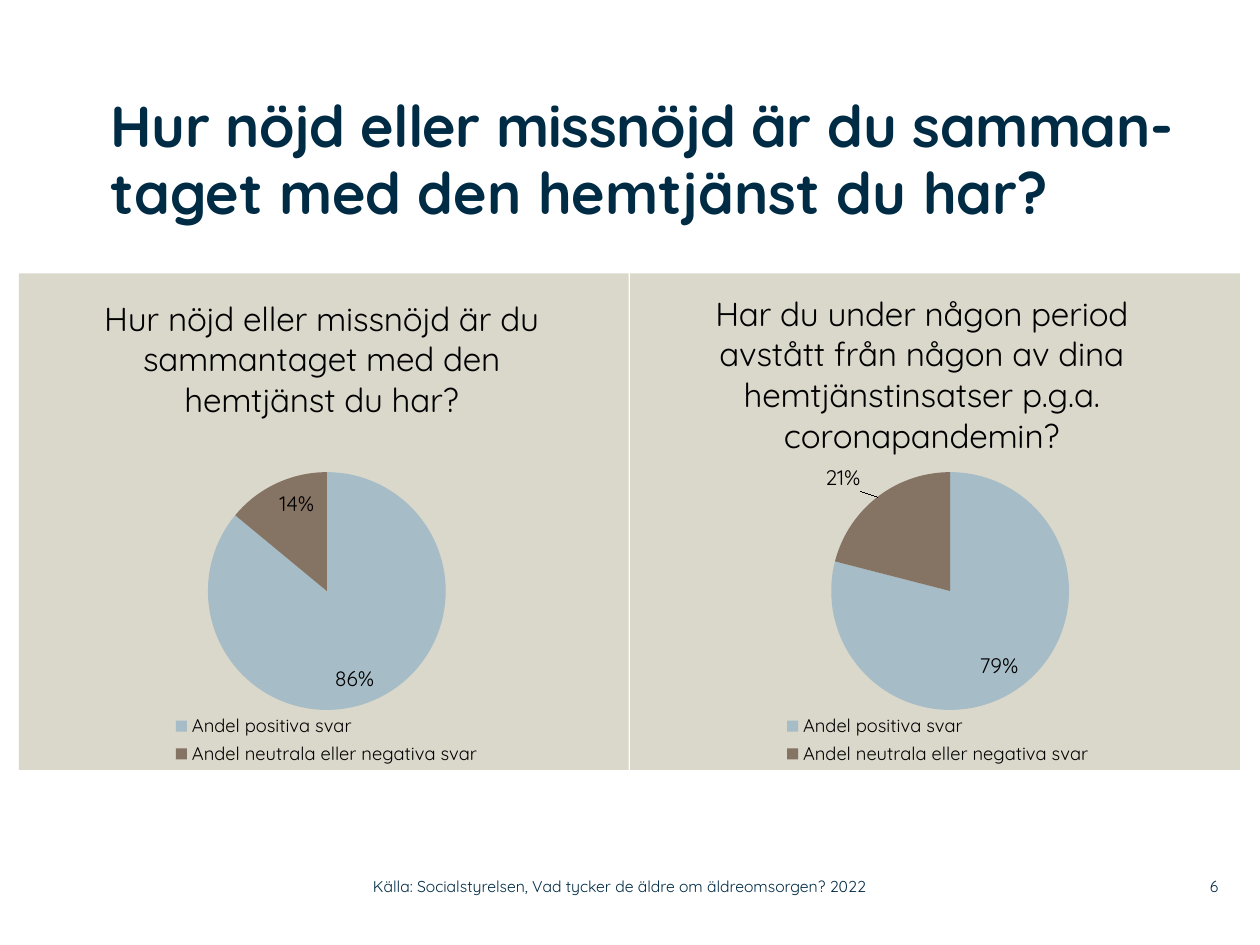
from dataclasses import dataclass

from lxml import etree
from pptx import Presentation
from pptx.chart.data import CategoryChartData
from pptx.dml.color import RGBColor
from pptx.enum.chart import XL_CHART_TYPE as ChartType
from pptx.enum.chart import XL_LABEL_POSITION as LabelPosition
from pptx.enum.chart import XL_LEGEND_POSITION as LegendPosition
from pptx.enum.text import MSO_ANCHOR as Anchor
from pptx.enum.text import PP_ALIGN as Align
from pptx.oxml import parse_xml
from pptx.oxml.ns import qn
from pptx.util import Emu, Pt

PX = 9144  # 100 px to the inch
C_NS = "http://schemas.openxmlformats.org/drawingml/2006/chart"
A_NS = "http://schemas.openxmlformats.org/drawingml/2006/main"


@dataclass(frozen=True)
class Theme:
    font: str = "Quicksand"
    navy: str = "002B45"
    black: str = "000000"
    panel: str = "DAD7CB"
    slices: tuple = ("A6BCC6", "857363")
    title: float = 33
    chart_title: float = 19
    chart: float = 18
    label: float = 12
    legend: float = 10.5
    footer: float = 9


def px(*lengths):
    return [Emu(length * PX) for length in lengths]


def manual_layout(values, inner=False, edge=True):
    """Build a chart layout from fractions x, y and optionally w, h."""
    layout = etree.Element(qn("c:layout"), nsmap={"c": C_NS})
    manual = etree.SubElement(layout, qn("c:manualLayout"))
    settings = [("layoutTarget", "inner")] if inner else []
    settings += [("xMode", "edge"), ("yMode", "edge")] if edge else []
    settings += zip("xywh", values)
    for name, value in settings:
        etree.SubElement(manual, qn("c:" + name)).set("val", str(value))
    return layout


def place(element, layout, index):
    for old in element.findall(qn("c:layout")):
        element.remove(old)
    element.insert(index, layout)


class SlideBuilder:
    def __init__(self, slide, theme):
        self.slide = slide
        self.theme = theme

    def style(self, font, size, color, bold=False):
        font.name = self.theme.font
        font.size = Pt(size)
        font.bold = bold
        font.color.rgb = RGBColor.from_string(color)

    def fill_text(self, box, runs, size, align=Align.LEFT, anchor=Anchor.TOP, bold=False):
        frame = box.text_frame
        frame.word_wrap = True
        frame.vertical_anchor = anchor
        frame.margin_left = frame.margin_right = 0
        frame.margin_top = frame.margin_bottom = 0
        para = frame.paragraphs[0]
        para.alignment = align
        for text in runs:
            span = para.add_run()
            span.text = text
            self.style(span.font, size, self.theme.navy, bold)
        return para

    def title(self, bounds, runs):
        box = self.slide.shapes.title
        box.left, box.top, box.width, box.height = px(*bounds)
        para = self.fill_text(box, runs, self.theme.title, bold=True)
        para.line_spacing = 0.96
        para.runs[0].font._element.set("spc", "-30")

    def text(self, bounds, text, align=Align.LEFT):
        box = self.slide.shapes.add_textbox(*px(*bounds))
        self.fill_text(box, [text], self.theme.footer, align, Anchor.MIDDLE)

    def pie(self, bounds, heading, answers, heading_at, plot_at):
        theme = self.theme
        data = CategoryChartData()
        data.categories = list(answers)
        data.add_series("Series 1", list(answers.values()))
        chart = self.slide.shapes.add_chart(ChartType.PIE, *px(*bounds), data).chart
        self.style(chart.font, theme.chart, theme.black)
        chart._chartSpace.find(qn("c:chart")).addnext(parse_xml(
            f'<c:spPr xmlns:c="{C_NS}" xmlns:a="{A_NS}"><a:solidFill>'
            f'<a:srgbClr val="{theme.panel}"/></a:solidFill>'
            '<a:ln><a:noFill/></a:ln></c:spPr>'))

        # Heading
        chart.has_title = True
        span = chart.chart_title.text_frame.paragraphs[0].add_run()
        span.text = heading
        self.style(span.font, theme.chart_title, theme.black)
        place(chart.chart_title._element, manual_layout(heading_at), 1)

        # Legend
        chart.has_legend = True
        chart.legend.position = LegendPosition.BOTTOM
        chart.legend.include_in_layout = False
        self.style(chart.legend.font, theme.legend, theme.black)
        place(chart.legend._element, manual_layout((0.25, 0.88, 0.51, 0.12)), 1)

        # Slices and percentages
        plot = chart.plots[0]
        plot.vary_by_categories = True
        place(chart._chartSpace.find(".//" + qn("c:plotArea")),
              manual_layout(plot_at, inner=True), 0)
        series = plot.series[0]
        for index, color in enumerate(theme.slices):
            fill = series.points[index].format.fill
            fill.solid()
            fill.fore_color.rgb = RGBColor.from_string(color)
            series.points[index].format.line.fill.background()
        labels = series.data_labels
        labels.show_value = False
        labels.show_percentage = True
        labels.number_format = "0%"
        labels.number_format_is_linked = False
        labels.position = LabelPosition.INSIDE_END
        self.style(labels.font, theme.label, theme.black)
        return series

    def pull_out_label(self, point, offset):
        """Move one percentage outside its slice."""
        label = point.data_label
        self.style(label.font, self.theme.label, self.theme.black)
        label.position = LabelPosition.OUTSIDE_END
        element = label._dLbl
        element.find(qn("c:showVal")).set("val", "0")
        element.find(qn("c:showPercent")).set("val", "1")
        place(element, manual_layout(offset, edge=False), 1)


def main():
    deck = Presentation()
    deck.slide_width, deck.slide_height = px(1000, 750)
    page = SlideBuilder(deck.slides.add_slide(deck.slide_layouts[5]), Theme())

    # Title
    page.title((88, 75, 894, 142),
               ["Hur nöjd eller missnöjd är du samman-", "taget med den hemtjänst du har?"])

    # Two pies side by side
    names = ("Andel positiva svar", "Andel neutrala eller negativa svar")
    pandemic = page.pie(
        (500, 217, 484, 394),
        "Har du under någon period avstått från någon av dina "
        "hemtjänstinsatser p.g.a. coronapandemin?",
        dict(zip(names, (79, 21))), (0.13, 0.02), (0.33, 0.4, 0.39, 0.48))
    page.pull_out_label(pandemic.points[1], (-0.02, 0))
    page.pie(
        (15, 217, 484, 394),
        "Hur nöjd eller missnöjd är du sammantaget med den hemtjänst du har?",
        dict(zip(names, (86, 14))), (0.13, 0.03), (0.31, 0.4, 0.39, 0.48))

    # Source and page number
    page.text((296, 689, 443, 29),
              "Källa: Socialstyrelsen, Vad tycker de äldre om äldreomsorgen? 2022")
    page.text((920, 689, 47, 29), "6", Align.RIGHT)

    deck.save("out.pptx")


if __name__ == "__main__":
    main()
